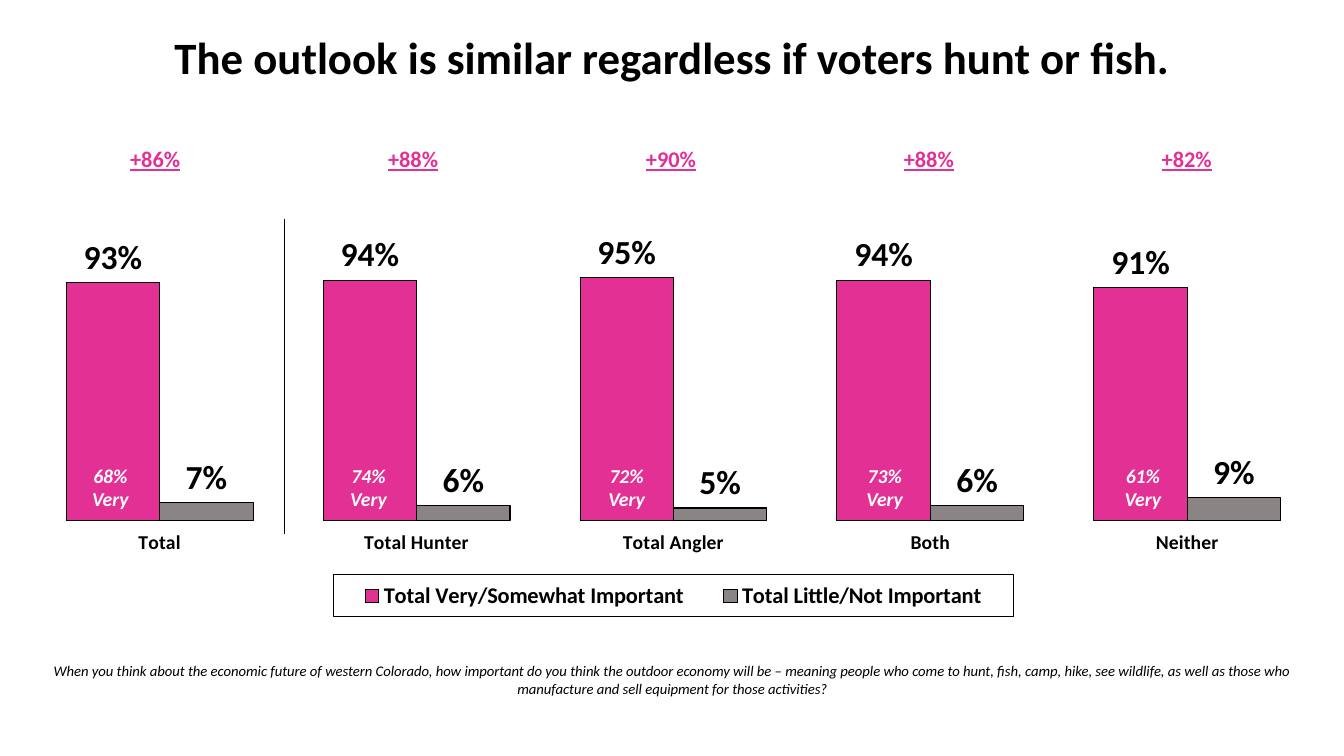
import pptx
import pptx.chart.data
import pptx.dml.color
import pptx.enum.chart
import pptx.enum.shapes
import pptx.enum.text
import pptx.oxml
import pptx.oxml.ns
import pptx.util
from pptx.util import Inches

RGBColor = pptx.dml.color.RGBColor
BLACK = RGBColor(0x00, 0x00, 0x00)
WHITE = RGBColor(0xFF, 0xFF, 0xFF)
PINK = RGBColor(0xE3, 0x30, 0x95)
GRAY = RGBColor(0x8A, 0x84, 0x84)
FONT = "Calibri"

GROUPS = ["Total", "Total Hunter", "Total Angler", "Both", "Neither"]
SERIES = [
    ("Total Very/Somewhat Important", [0.93, 0.94, 0.95, 0.94, 0.91], PINK),
    ("Total Little/Not Important", [0.07, 0.06, 0.05, 0.06, 0.09], GRAY),
]
NET_SCORES = ["+86%", "+88%", "+90%", "+88%", "+82%"]
VERY_SHARES = ["68%\nVery", "74%\nVery", "72% Very", "73% Very", "61% Very"]
QUESTION = (
    "When you think about the economic future of western Colorado, how important "
    "do you think the outdoor economy will be – meaning people who come to hunt, "
    "fish, camp, hike, see wildlife, as well as those who manufacture and sell "
    "equipment for those activities?"
)


def style_font(font, size, color=BLACK, bold=False, italic=False, underline=False):
    font.name = FONT
    font.size = pptx.util.Pt(size)
    font.color.rgb = color
    font.bold = bold
    font.italic = italic
    font.underline = underline


def write_text(frame, text, **font_format):
    frame.word_wrap = True
    for index, line in enumerate(text.split("\n")):
        para = frame.add_paragraph() if index else frame.paragraphs[0]
        para.alignment = pptx.enum.text.PP_ALIGN.CENTER
        span = para.add_run()
        span.text = line
        style_font(span.font, **font_format)


def add_text(page, left, top, width, height, text, **font_format):
    box = page.shapes.add_textbox(
        Inches(left), Inches(top), Inches(width), Inches(height))
    write_text(box.text_frame, text, **font_format)


def place_title(page, left, top, width, height):
    title = page.shapes.title
    title.left, title.top = Inches(left), Inches(top)
    title.width, title.height = Inches(width), Inches(height)
    title.text_frame.auto_size = pptx.enum.text.MSO_AUTO_SIZE.NONE
    title.text_frame.vertical_anchor = pptx.enum.text.MSO_ANCHOR.TOP
    write_text(title.text_frame,
               "The outlook is similar regardless if voters hunt or fish.",
               size=32, bold=True)


def make_layout(x, y, width, height, inner=False):
    target = '<c:layoutTarget val="inner"/>' if inner else ""
    return pptx.oxml.parse_xml(
        f'<c:layout {pptx.oxml.ns.nsdecls("c")}><c:manualLayout>{target}'
        '<c:xMode val="edge"/><c:yMode val="edge"/>'
        f'<c:x val="{x}"/><c:y val="{y}"/><c:w val="{width}"/><c:h val="{height}"/>'
        '</c:manualLayout></c:layout>')


def replace_layout(parent, position, layout):
    for old in parent.findall(pptx.oxml.ns.qn("c:layout")):
        parent.remove(old)
    parent.insert(position, layout)


def format_axes(chart):
    value_axis = chart.value_axis
    value_axis.minimum_scale = -0.01
    value_axis.maximum_scale = 1
    value_axis.has_major_gridlines = False
    value_axis.tick_labels.number_format = "0%"
    value_axis.tick_labels.number_format_is_linked = False
    value_axis.visible = False
    category_axis = chart.category_axis
    category_axis.format.line.fill.background()
    category_axis.major_tick_mark = pptx.enum.chart.XL_TICK_MARK.OUTSIDE
    style_font(category_axis.tick_labels.font, 14, bold=True)


def format_legend(chart):
    chart.has_legend = True
    legend = chart.legend
    legend.position = pptx.enum.chart.XL_LEGEND_POSITION.BOTTOM
    legend.include_in_layout = False
    style_font(legend.font, 16, bold=True)
    element = legend._element
    replace_layout(element, 1, make_layout(0.235, 0.802, 0.53, 0.075))
    element.find(pptx.oxml.ns.qn("c:overlay")).addnext(pptx.oxml.parse_xml(
        f'<c:spPr {pptx.oxml.ns.nsdecls("c", "a")}><a:ln w="9525"><a:solidFill>'
        f'<a:srgbClr val="{BLACK}"/></a:solidFill></a:ln></c:spPr>'))


def add_importance_chart(page, left, top, width, height):
    data = pptx.chart.data.CategoryChartData(number_format="0%")
    data.categories = GROUPS
    for name, values, color in SERIES:
        data.add_series(name, values)
    chart = page.shapes.add_chart(
        pptx.enum.chart.XL_CHART_TYPE.COLUMN_CLUSTERED,
        Inches(left), Inches(top), Inches(width), Inches(height), data).chart
    chart.has_title = False
    style_font(chart.font, 18)
    plot = chart.plots[0]
    plot.gap_width = 75
    plot.overlap = 0
    plot.vary_by_categories = False
    for series, (name, values, color) in zip(plot.series, SERIES):
        series.invert_if_negative = False
        series.format.fill.solid()
        series.format.fill.fore_color.rgb = color
        series.format.line.color.rgb = BLACK
        series.format.line.width = pptx.util.Pt(0.75)
        labels = series.data_labels
        labels.show_value = True
        labels.position = pptx.enum.chart.XL_LABEL_POSITION.OUTSIDE_END
        labels.number_format = "0%"
        labels.number_format_is_linked = False
        style_font(labels.font, 24, bold=True)
    format_axes(chart)
    format_legend(chart)
    plot_area = chart._chartSpace.chart.plotArea
    replace_layout(plot_area, 0, make_layout(0, 0.247, 1, 0.463, inner=True))


def add_net_scores(page, left, top, width, height):
    table = page.shapes.add_table(
        1, len(NET_SCORES), Inches(left), Inches(top),
        Inches(width), Inches(height)).table
    table.first_row = False
    table.horz_banding = False
    for cell, score in zip(table.rows[0].cells, NET_SCORES):
        cell.fill.background()
        cell.vertical_anchor = pptx.enum.text.MSO_ANCHOR.MIDDLE
        write_text(cell.text_frame, score,
                   size=16, color=PINK, bold=True, underline=True)


def add_divider(page, x, top, bottom):
    divider = page.shapes.add_connector(
        pptx.enum.shapes.MSO_CONNECTOR.STRAIGHT,
        Inches(x), Inches(top), Inches(x), Inches(bottom))
    divider.line.color.rgb = BLACK
    divider.line.width = pptx.util.Pt(1)
    divider._element.spPr.append(pptx.oxml.parse_xml(
        f'<a:effectLst {pptx.oxml.ns.nsdecls("a")}/>'))


def add_very_shares(page, left, top, width, height, pitch):
    for index, share in enumerate(VERY_SHARES):
        add_text(page, left + index * pitch, top, width, height, share,
                 size=14, color=WHITE, bold=True, italic=True)


def main():
    deck = pptx.Presentation()
    deck.slide_width, deck.slide_height = Inches(13.33), Inches(7.5)
    page = deck.slides.add_slide(deck.slide_layouts.get_by_name("Title Only"))
    add_importance_chart(page, 0.31, 1.26, 12.74, 5.54)
    add_net_scores(page, 0.26, 1.38, 12.79, 0.41)
    place_title(page, 0.29, 0.24, 12.76, 0.64)
    add_divider(page, 2.82, 2.17, 5.3)
    add_text(page, 0.29, 6.52, 12.76, 0.45, QUESTION, size=10.5, italic=True)
    add_very_shares(page, 0.65, 4.55, 0.89, 0.57, pitch=2.56)
    deck.save("out.pptx")


if __name__ == "__main__":
    main()
